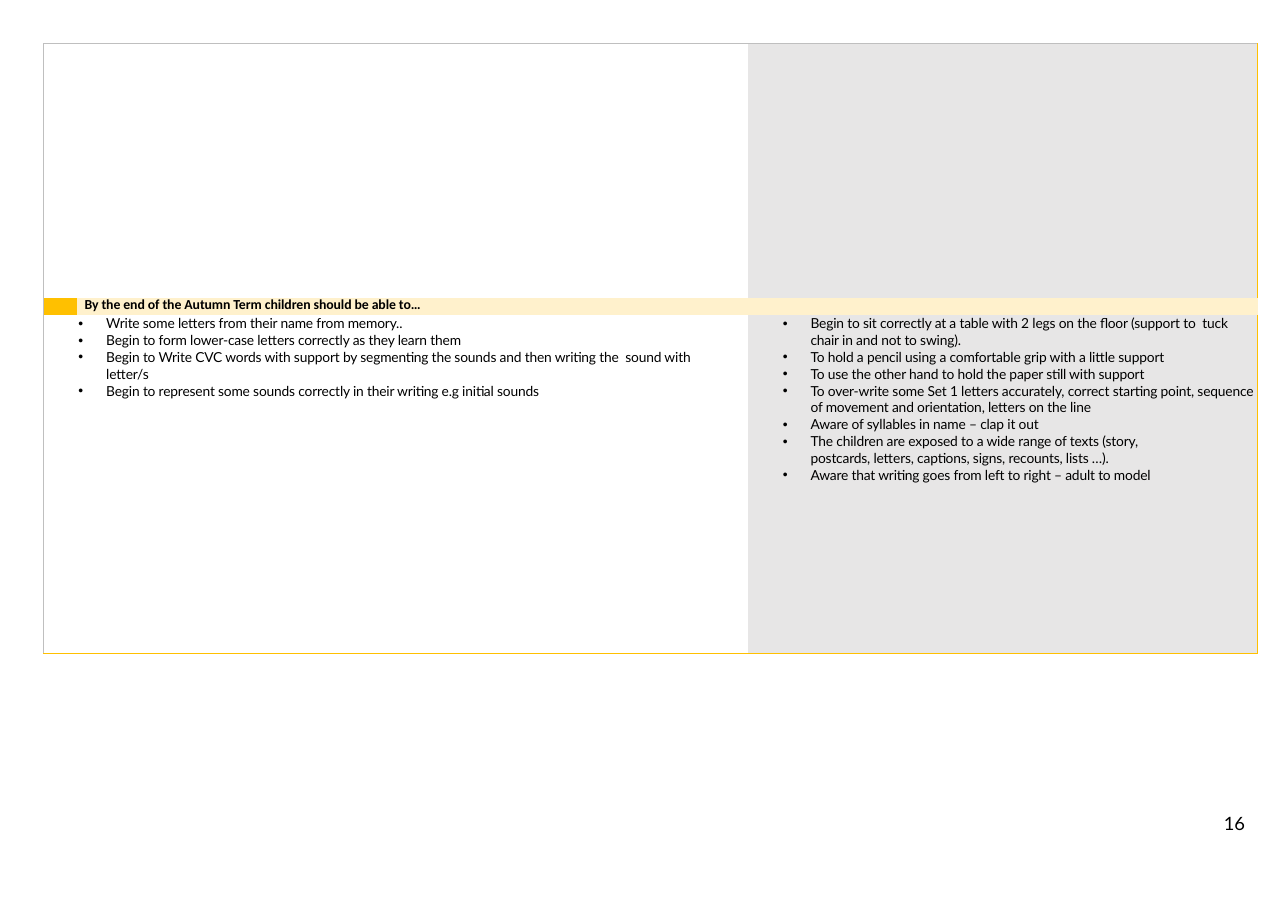
from lxml import etree
from pptx import Presentation
from pptx import util as u
from pptx.dml.color import RGBColor
from pptx.enum import text
from pptx.oxml.ns import qn

COLORS = {"ink": "000000", "gold": "FFC000", "cream": "FFF1CC",
          "gray": "E7E6E6", "edge": "BFBFBF"}


def style(para, font, size, bold=False, track=0):
    for run in para.runs:
        run.font.name = font
        run.font.size = u.Pt(size)
        run.font.bold = bold
        run.font.color.rgb = RGBColor.from_string(COLORS["ink"])
        run.font._element.set("spc", str(track))
    for brk in para._p.findall(qn("a:br")):
        etree.SubElement(brk, qn("a:rPr"), sz=str(size * 100))


def border(cell, side, color, width):
    line = etree.SubElement(cell._tc.get_or_add_tcPr(), qn("a:" + side),
                            w=str(u.Pt(width)))
    fill = etree.SubElement(line, qn("a:solidFill"))
    etree.SubElement(fill, qn("a:srgbClr"), val=COLORS[color])


deck = Presentation()
deck.slide_width, deck.slide_height = u.Cm(29.7), u.Cm(21)
slide = deck.slides.add_slide(deck.slide_layouts[6])

cols = [0.77, 15.47, 11.76]
rows = [5.87, 0.39, 7.8]
frame = slide.shapes.add_table(3, 3, u.Cm(1), u.Cm(1),
                               u.Cm(sum(cols)), u.Cm(sum(rows)))
table = frame.table
table.first_row = table.horz_banding = False
table._tbl.tblPr[0].text = "{2D5ABB26-0587-4C30-8999-92F81FD0307C}"
for col, width in zip(table.columns, cols):
    col.width = u.Cm(width)
for row, height in zip(table.rows, rows):
    row.height = u.Cm(height)

fills = [[None, None, "gray"], ["gold", "cream", "cream"], [None, None, "gray"]]
for r in range(3):
    for c in range(3):
        cell = table.cell(r, c)
        cell.margin_left = cell.margin_right = 0
        cell.margin_top = cell.margin_bottom = 0
        if c == 0:
            border(cell, "lnL", "edge", 0.5)
        if c == 2:
            border(cell, "lnR", "gold", 1)
        if r == 0:
            border(cell, "lnT", "edge", 0.5)
        if r == 2:
            border(cell, "lnB", "gold", 1)
        if fills[r][c]:
            cell.fill.solid()
            cell.fill.fore_color.rgb = RGBColor.from_string(COLORS[fills[r][c]])
        else:
            cell.fill.background()
        para = cell.text_frame.paragraphs[0]
        etree.SubElement(para._p, qn("a:endParaRPr"), sz="600")

table.cell(0, 0).merge(table.cell(0, 1))
table.cell(1, 1).merge(table.cell(1, 2))
table.cell(2, 0).merge(table.cell(2, 1))

head = table.cell(1, 1)
head.margin_left = u.Cm(0.18)
para = head.text_frame.paragraphs[0]
para.text = "By the end of the Autumn Term children should be able to…"
para.line_spacing = u.Pt(10.1)
style(para, "Calibri", 9, bold=True, track=-5)

goals = [
    "Write some letters from their name from memory..",
    "Begin to form lower-case letters correctly as they learn them",
    "Begin to Write CVC words with support by segmenting the sounds and then "
    "writing the  sound with letter/s",
    "Begin to represent some sounds correctly in their writing e.g initial sounds",
]
skills = [
    "Begin to sit correctly at a table with 2 legs on the floor (support to  tuck "
    "chair in and not to swing).",
    "To hold a pencil using a comfortable grip with a little support",
    "To use the other hand to hold the paper still with support",
    "To over-write some Set 1 letters accurately, correct starting point, "
    "sequence of movement and orientation, letters on the line",
    "Aware of syllables in name – clap it out",
    "The children are exposed to a wide range of texts (story,\v"
    "postcards, letters, captions, signs, recounts, lists …).",
    "Aware that writing goes from left to right – adult to model",
]
table.cell(2, 0).margin_right = u.Cm(0.5)
for c, items, pitch in [(0, goals, 1.02), (2, skills, u.Pt(11))]:
    body = table.cell(2, c).text_frame
    for i, item in enumerate(items):
        para = body.add_paragraph() if i else body.paragraphs[0]
        para.text = item
        para.line_spacing = pitch
        props = para._p.get_or_add_pPr()
        props.set("marL", str(u.Cm(1.45)))
        props.set("indent", str(u.Cm(-0.64)))
        etree.SubElement(props, qn("a:buFont"), typeface="Arial")
        etree.SubElement(props, qn("a:buChar"), char="•")
        style(para, "Lato", 9, track=-10)

box = slide.shapes.add_textbox(u.Cm(28.12), u.Cm(18.72), u.Cm(0.69), u.Cm(0.58))
page = box.text_frame
page.word_wrap = True
page.auto_size = text.MSO_AUTO_SIZE.NONE
page.margin_left = u.Cm(0.1)
page.margin_right = page.margin_top = page.margin_bottom = 0
page.text = "16"
page.paragraphs[0].space_before = u.Pt(1.1)
style(page.paragraphs[0], "Lato", 12)

deck.save("out.pptx")
